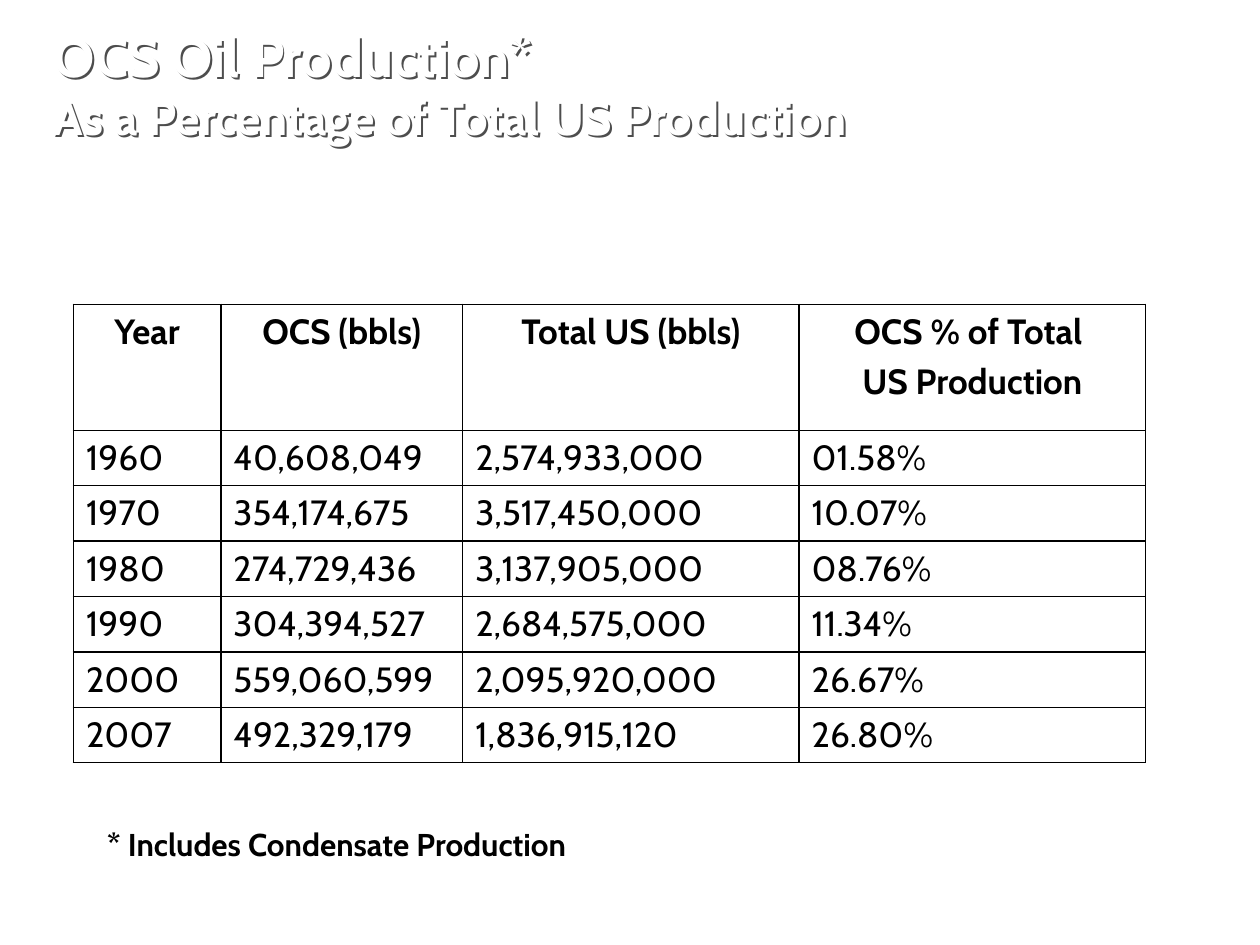
import pptx
import pptx.util
import pptx.dml.color
import pptx.enum.text
import pptx.oxml
import pptx.oxml.ns

WIDE, HIGH = 10, 7.5
FONT = "Cabin"
INK = {"white": "FFFFFF", "black": "000000", "shade": "4D4D4D"}
NS = pptx.oxml.ns.nsdecls("a")

HEAD = [["Year"], ["OCS (bbls)"], ["Total US (bbls)"],
        ["OCS % of Total ", "US Production"]]
DATA = [
    ("1960", "40,608,049", "2,574,933,000", "01.58%"),
    ("1970", "354,174,675", "3,517,450,000", "10.07%"),
    ("1980", "274,729,436", "3,137,905,000", "08.76%"),
    ("1990", "304,394,527", "2,684,575,000", "11.34%"),
    ("2000", "559,060,599", "2,095,920,000", "26.67%"),
    ("2007", "492,329,179", "1,836,915,120", "26.80%"),
]


class Deck:
    """Holds the style and the current slide; boxes are shares of its size."""

    def __init__(self):
        self.file = pptx.Presentation()
        self.file.slide_width = pptx.util.Inches(WIDE)
        self.file.slide_height = pptx.util.Inches(HIGH)
        self.slide = self.file.slides.add_slide(self.file.slide_layouts[6])

    def place(self, left, top, width, height):
        return [pptx.util.Inches(share * side) for share, side in
                zip((left, top, width, height), (WIDE, HIGH, WIDE, HIGH))]

    def run(self, para, text, size, ink="black", bold=True):
        run = para.add_run()
        run.text = text
        run.font.name = FONT
        run.font.size = pptx.util.Pt(size)
        run.font.bold = bold
        run.font.color.rgb = pptx.dml.color.RGBColor.from_string(INK[ink])

    def shade(self, shape):
        # An unfilled box casts the shadow of its letters
        shape._element.spPr.append(pptx.oxml.parse_xml(
            f'<a:effectLst {NS}><a:outerShdw dist="20000" dir="2700000" '
            f'algn="ctr" rotWithShape="0"><a:srgbClr val="{INK["shade"]}"/>'
            f'</a:outerShdw></a:effectLst>'))

    def text(self, box, lines, anchor="TOP", ink="black"):
        shape = self.slide.shapes.add_textbox(*self.place(*box))
        frame = shape.text_frame
        frame.word_wrap = True
        frame.vertical_anchor = pptx.enum.text.MSO_ANCHOR[anchor]
        para = frame.paragraphs[0]
        for i, (line, size) in enumerate(lines):
            if i:
                para.add_line_break()
            self.run(para, line, size, ink)
        return shape

    def border(self, cell):
        props = cell._tc.get_or_add_tcPr()
        for i, side in enumerate("LRTB"):
            props.insert(i, pptx.oxml.parse_xml(
                f'<a:ln{side} {NS} w="12700"><a:solidFill>'
                f'<a:srgbClr val="{INK["black"]}"/></a:solidFill></a:ln{side}>'))

    def cell(self, cell, lines, head):
        cell.fill.background()
        self.border(cell)
        for i, line in enumerate(lines):
            para = cell.text_frame.paragraphs[0]
            if i:
                para = cell.text_frame.add_paragraph()
                para.space_before = pptx.util.Pt(4)
            if head:
                para.alignment = pptx.enum.text.PP_ALIGN.CENTER
            self.run(para, line, 20, bold=head)

    def table(self, box, rows, widths, heights):
        grid = self.slide.shapes.add_table(
            len(rows), len(widths), *self.place(*box)).table
        grid.first_row = grid.horz_banding = False
        for col, width in zip(grid.columns, widths):
            col.width = pptx.util.Inches(width)
        for r, (row, height) in enumerate(zip(rows, heights)):
            grid.rows[r].height = pptx.util.Inches(height)
            for c, lines in enumerate(row):
                self.cell(grid.cell(r, c), lines, head=r == 0)


def main():
    deck = Deck()
    # Title
    title = deck.text((0.033, 0, 0.833, 0.178),
                      [("OCS Oil Production*", 31),
                       ("As a Percentage of Total US Production", 27)],
                      anchor="MIDDLE", ink="white")
    deck.shade(title)
    # Production by year
    rows = [HEAD] + [[[item] for item in row] for row in DATA]
    deck.table((0.0583, 0.322, 0.85, 0.485), rows,
               widths=[1.17, 1.92, 2.67, 2.75],
               heights=[1] + [0.44] * len(DATA))
    # Footnote
    deck.text((0.075, 0.867, 0.833, 0.053),
              [("* Includes Condensate Production", 18)])
    deck.file.save("out.pptx")


if __name__ == "__main__":
    main()
